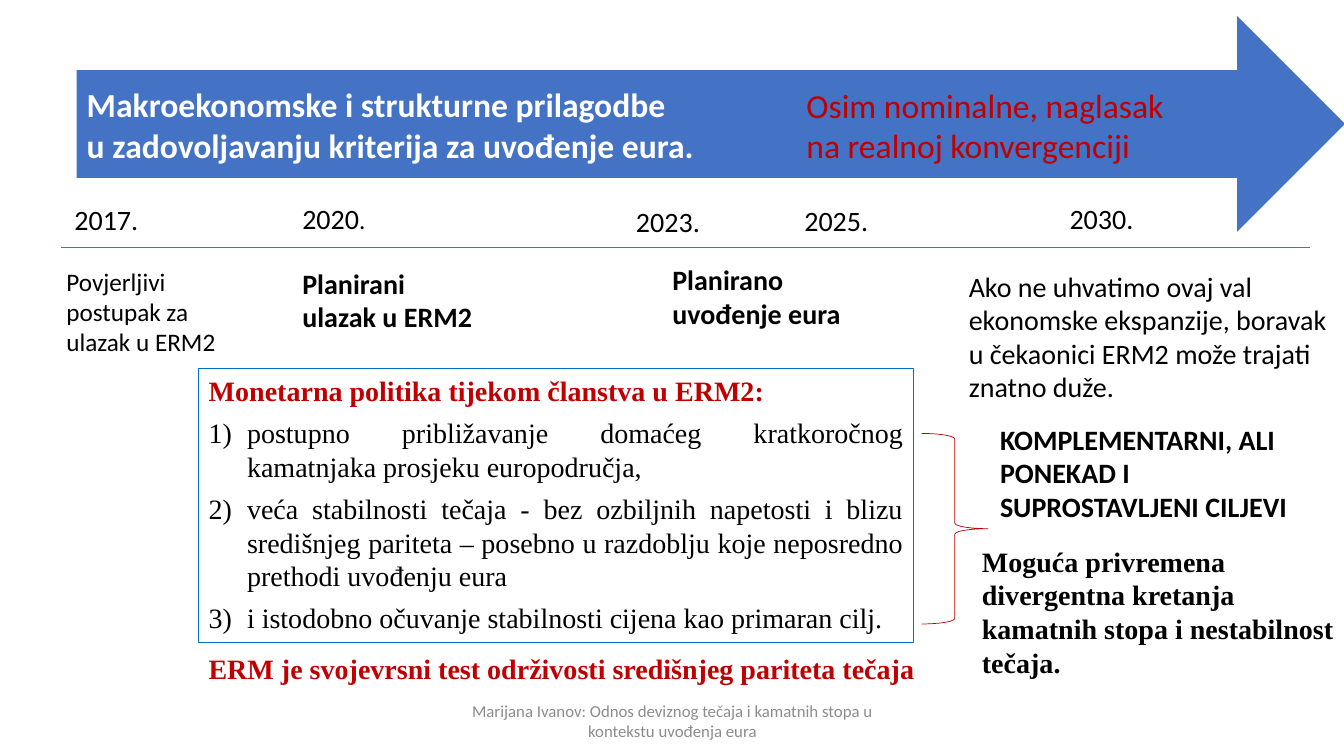
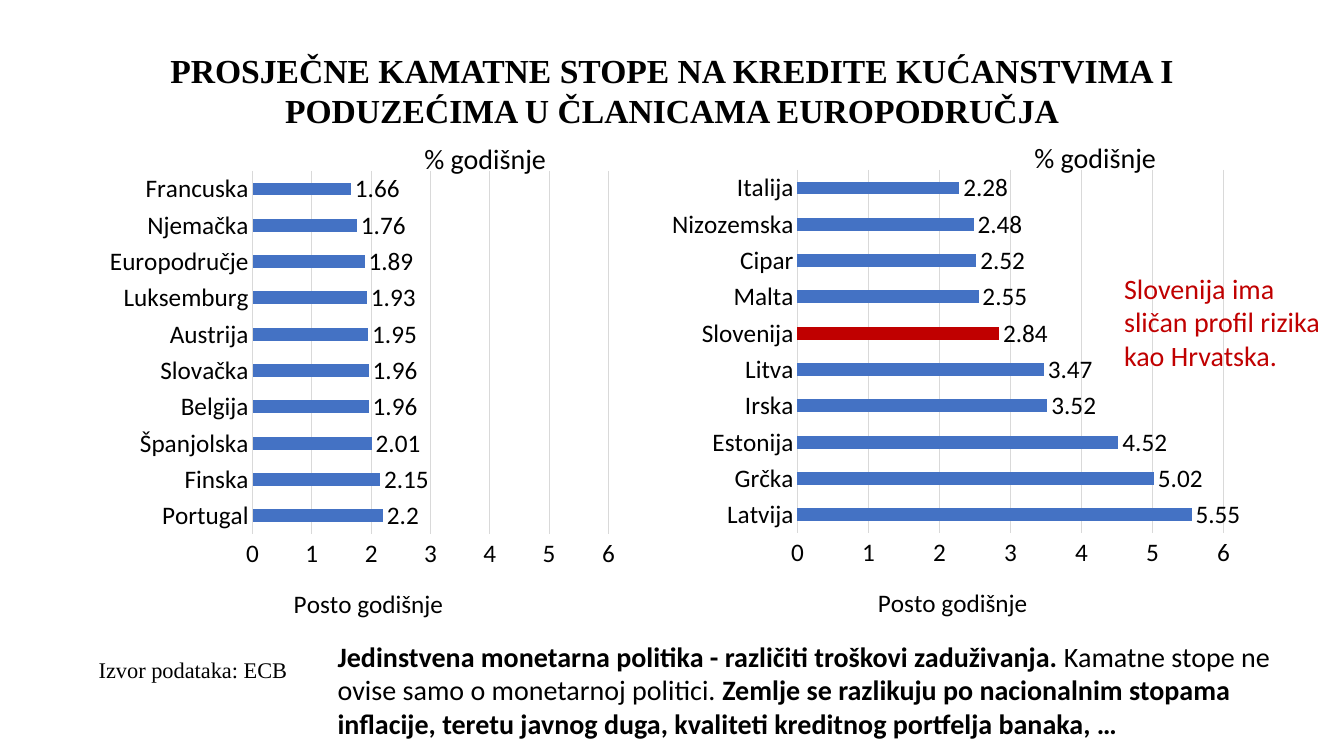
from lxml import etree
from pptx import Presentation
from pptx.chart.data import CategoryChartData
from pptx.dml.color import RGBColor
from pptx.enum.chart import XL_CHART_TYPE, XL_LABEL_POSITION, XL_TICK_MARK
from pptx.enum.shapes import MSO_CONNECTOR, MSO_SHAPE
from pptx.enum.text import MSO_ANCHOR, MSO_AUTO_SIZE, PP_ALIGN
from pptx.oxml.ns import qn
from pptx.util import Inches, Pt

BAR_CLUSTERED = XL_CHART_TYPE.BAR_CLUSTERED
OUTSIDE_END = XL_LABEL_POSITION.OUTSIDE_END
NO_TICK = XL_TICK_MARK.NONE
CENTER = PP_ALIGN.CENTER
JUSTIFY = PP_ALIGN.JUSTIFY
LEFT = PP_ALIGN.LEFT
MIDDLE = MSO_ANCHOR.MIDDLE
TOP = MSO_ANCHOR.TOP
NO_AUTOFIT = MSO_AUTO_SIZE.NONE

SANS = "Calibri"
SERIF = "Times New Roman"
BLACK = "000000"
WHITE = "FFFFFF"
RED = "C00000"
BLUE = "4472C4"
BOX_BLUE = "0070C0"
FOOTER_GRAY = "8C8C8C"
GRID_GRAY = "D9D9D9"
color = RGBColor.from_string


def style_text(shape, size=20, hex_color=BLACK, bold=False, font=SANS,
               align=LEFT, anchor=TOP):
    frame = shape.text_frame
    frame.auto_size = NO_AUTOFIT
    frame.vertical_anchor = anchor
    for paragraph in frame.paragraphs:
        paragraph.alignment = align
        for run in paragraph.runs:
            run.font.name = font
            run.font.size = Pt(size)
            run.font.bold = bold
            run.font.color.rgb = color(hex_color)


def add_text(slide, box, text, wrap=True, **style):
    shape = slide.shapes.add_textbox(*map(Inches, box))
    shape.text_frame.word_wrap = wrap
    shape.text_frame.text = text
    style_text(shape, **style)
    return shape


presentation = Presentation()
presentation.slide_width = Inches(13.33)
presentation.slide_height = Inches(7.5)

timeline_slide = presentation.slides.add_slide(presentation.slide_layouts[1])
shapes = timeline_slide.shapes

arrow = shapes.add_shape(MSO_SHAPE.RIGHT_ARROW, Inches(0.76), Inches(0.16),
                         Inches(12.58), Inches(2.14))
arrow.shadow.inherit = False
arrow.fill.solid()
arrow.fill.fore_color.rgb = color(BLUE)
arrow.line.fill.background()
title = shapes.title
title._element.addprevious(arrow._element)
title.left, title.top, title.width, title.height = map(Inches, (0.76, 0.7, 7.1, 1.07))
title.text_frame.text = ("Makroekonomske i strukturne prilagodbe\n"
                         "u zadovoljavanju kriterija za uvođenje eura.")
style_text(title, size=24, hex_color=WHITE, bold=True, anchor=MIDDLE)
add_text(timeline_slide, (7.9, 0.79, 4.37, 0.91),
         "Osim nominalne, naglasak\nna realnoj konvergenciji", size=24, hex_color=RED)

axis_line = shapes.add_connector(MSO_CONNECTOR.STRAIGHT, Inches(0.61), Inches(2.45),
                                 Inches(12.99), Inches(2.45))
axis_line.line.color.rgb = color(BLUE)
axis_line.line.width = Pt(0.5)
etree.SubElement(axis_line._element.spPr, qn("a:effectLst"))

for year, left, top in (("2017.", 0.64, 1.96), ("2020", 2.9, 1.95), ("2023.", 6.21, 1.98),
                        ("2025.", 7.88, 1.97), ("2030.", 10.51, 1.95)):
    year_label = add_text(timeline_slide, (left, top, 0.84, 0.44), year, wrap=False)
    if year == "2020":
        dot = year_label.text_frame.paragraphs[0].add_run()
        dot.text = "."
        dot.font.name = SANS
        dot.font.size = Pt(18)
        dot.font.color.rgb = color(BLACK)

for box, text, style in (
    ((0.56, 2.59, 1.76, 1.01), "Povjerljivi postupak za ulazak u ERM2", {"size": 18}),
    ((2.9, 2.59, 1.95, 0.77), "Planirani\nulazak u ERM2", {"bold": True}),
    ((6.57, 2.56, 2.34, 0.77), "Planirano uvođenje eura", {"bold": True}),
    ((9.51, 2.62, 3.81, 1.45),
     "Ako ne uhvatimo ovaj val ekonomske ekspanzije, boravak u čekaonici ERM2 "
     "može trajati znatno duže.", {}),
    ((9.82, 4.14, 3.1, 1.11), "KOMPLEMENTARNI, ALI PONEKAD I SUPROSTAVLJENI CILJEVI",
     {"bold": True}),
    ((9.64, 5.35, 3.81, 1.45),
     "Moguća privremena divergentna kretanja kamatnih stopa i nestabilnost tečaja.",
     {"bold": True, "font": SERIF}),
    ((1.97, 6.41, 7.54, 0.44),
     "ERM je svojevrsni test održivosti središnjeg pariteta tečaja",
     {"bold": True, "font": SERIF, "hex_color": RED}),
    ((4.42, 6.95, 4.5, 0.4),
     "Marijana Ivanov: Odnos deviznog tečaja i kamatnih stopa u kontekstu uvođenja eura",
     {"size": 12, "hex_color": FOOTER_GRAY, "align": CENTER, "anchor": MIDDLE}),
):
    add_text(timeline_slide, box, text, **style)

policy = timeline_slide.placeholders[1]
policy.left, policy.top, policy.width, policy.height = map(Inches, (1.97, 3.66, 7.09, 2.71))
policy.line.color.rgb = color(BOX_BLUE)
policy.line.width = Pt(0.75)
policy.text_frame.text = "\n".join((
    "Monetarna politika tijekom članstva u ERM2:",
    "postupno približavanje domaćeg kratkoročnog kamatnjaka prosjeku europodručja,",
    "veća stabilnosti tečaja - bez ozbiljnih napetosti i blizu središnjeg pariteta – "
    "posebno u razdoblju koje neposredno prethodi uvođenju eura",
    "i istodobno očuvanje stabilnosti cijena kao primaran cilj.",
))
style_text(policy, font=SERIF, align=JUSTIFY)
for number, paragraph in enumerate(policy.text_frame.paragraphs):
    paragraph.space_before = Pt(6)
    properties = paragraph._p.get_or_add_pPr()
    indent = Inches(0.38) if number else 0
    properties.set("marL", str(indent))
    properties.set("indent", str(-indent))
    if number:
        etree.SubElement(properties, qn("a:buFont"), typeface="+mj-lt")
        etree.SubElement(properties, qn("a:buAutoNum"), type="arabicParenR")
    else:
        etree.SubElement(properties, qn("a:buNone"))
        heading = paragraph.runs[0].font
        heading.bold = True
        heading.color.rgb = color(RED)

brace = shapes.add_shape(MSO_SHAPE.RIGHT_BRACE, Inches(9.14), Inches(4.3),
                         Inches(0.66), Inches(1.89))
brace.shadow.inherit = False
brace.fill.background()
brace.line.color.rgb = color(RED)
brace.line.width = Pt(0.5)

rates_slide = presentation.slides.add_slide(presentation.slide_layouts[5])
title = rates_slide.shapes.title
title.left, title.top, title.width, title.height = map(Inches, (0.67, 0.44, 11.99, 0.91))
title.text_frame.text = ("PROSJEČNE KAMATNE STOPE NA KREDITE KUĆANSTVIMA I "
                         "PODUZEĆIMA U ČLANICAMA EUROPODRUČJA")
style_text(title, size=24, bold=True, font=SERIF, align=CENTER)

low_rates = {"Portugal": 2.2, "Finska": 2.15, "Španjolska": 2.01, "Belgija": 1.96,
             "Slovačka": 1.96, "Austrija": 1.95, "Luksemburg": 1.93,
             "Europodručje": 1.89, "Njemačka": 1.76, "Francuska": 1.66}
high_rates = {"Latvija": 5.55, "Grčka": 5.02, "Estonija": 4.52, "Irska": 3.52,
              "Litva": 3.47, "Slovenija": 2.84, "Malta": 2.55, "Cipar": 2.52,
              "Nizozemska": 2.48, "Italija": 2.28}

for rates, box, plot_area, title_corner in (
    (low_rates, (1, 1.6, 5.19, 4.74),
     {"x": 0.29, "y": 0.02, "w": 0.68, "h": 0.76}, {"x": 0.36, "y": 0.88}),
    (high_rates, (6.52, 1.59, 5.79, 4.74),
     {"x": 0.24, "y": 0.02, "w": 0.73, "h": 0.76}, {"x": 0.37, "y": 0.88}),
):
    chart_data = CategoryChartData()
    chart_data.categories = list(rates)
    chart_data.add_series("Series 1", list(rates.values()))
    chart = rates_slide.shapes.add_chart(BAR_CLUSTERED, *map(Inches, box), chart_data).chart
    chart.has_legend = False
    chart.has_title = False
    chart.font.name = SANS
    chart.font.size = Pt(18)
    chart.font.color.rgb = color(BLACK)

    plot = chart.plots[0]
    plot.gap_width = 182
    plot.vary_by_categories = False
    plot.has_data_labels = True
    plot.data_labels.show_value = True
    plot.data_labels.position = OUTSIDE_END
    series = plot.series[0]
    series.format.fill.solid()
    series.format.fill.fore_color.rgb = color(BLUE)
    if "Slovenija" in rates:
        highlight = series.points[list(rates).index("Slovenija")].format.fill
        highlight.solid()
        highlight.fore_color.rgb = color(RED)

    category_axis = chart.category_axis
    category_axis.major_tick_mark = NO_TICK
    category_axis.format.line.color.rgb = color(GRID_GRAY)
    category_axis.format.line.width = Pt(0.75)

    value_axis = chart.value_axis
    value_axis.minimum_scale = 0
    value_axis.maximum_scale = 6
    value_axis.major_unit = 1
    value_axis.major_tick_mark = NO_TICK
    value_axis.format.line.fill.background()
    value_axis.major_gridlines.format.line.color.rgb = color(GRID_GRAY)
    value_axis.major_gridlines.format.line.width = Pt(0.75)
    axis_title = value_axis.axis_title
    axis_title.text_frame.text = "Posto godišnje"
    title_font = axis_title.text_frame.paragraphs[0].runs[0].font
    title_font.name = SANS
    title_font.size = Pt(18)
    title_font.bold = False
    title_font.color.rgb = color(BLACK)

    plot_element = chart._chartSpace.find(".//" + qn("c:plotArea"))
    for parent, position, sizes in ((plot_element, 0, plot_area),
                                    (axis_title._element, 1, title_corner)):
        for old_layout in parent.findall(qn("c:layout")):
            parent.remove(old_layout)
        layout = etree.Element(qn("c:layout"))
        manual = etree.SubElement(layout, qn("c:manualLayout"))
        if parent is plot_element:
            etree.SubElement(manual, qn("c:layoutTarget"), val="inner")
        for side in "xy":
            etree.SubElement(manual, qn(f"c:{side}Mode"), val="edge")
        for side, share in sizes.items():
            etree.SubElement(manual, qn(f"c:{side}"), val=str(share))
        parent.insert(position, layout)

for left, top in ((4.11, 1.35), (10.16, 1.34)):
    add_text(rates_slide, (left, top, 1.74, 0.44), "% godišnje")

add_text(rates_slide, (11.05, 2.64, 2.29, 1.11),
         "Slovenija ima sličan profil rizika kao Hrvatska.", hex_color=RED)
source_note = add_text(rates_slide, (0.88, 6.33, 2.1, 0.5), "Izvor podataka: ECB",
                       wrap=False, size=16, font=SERIF, align=JUSTIFY)
source_note.text_frame.paragraphs[0].line_spacing = 1.5

conclusion = add_text(rates_slide, (3.25, 6.29, 9.89, 1.11), "")
paragraph = conclusion.text_frame.paragraphs[0]
for text in ("Jedinstvena monetarna politika - različiti troškovi zaduživanja. ",
             "Kamatne stope ne ovise samo o monetarnoj politici. ",
             "Zemlje se razlikuju po nacionalnim stopama inflacije, teretu javnog duga, "
             "kvaliteti kreditnog portfelja banaka, …"):
    paragraph.add_run().text = text
style_text(conclusion, bold=True)
paragraph.runs[1].font.bold = False

presentation.save("out.pptx")
